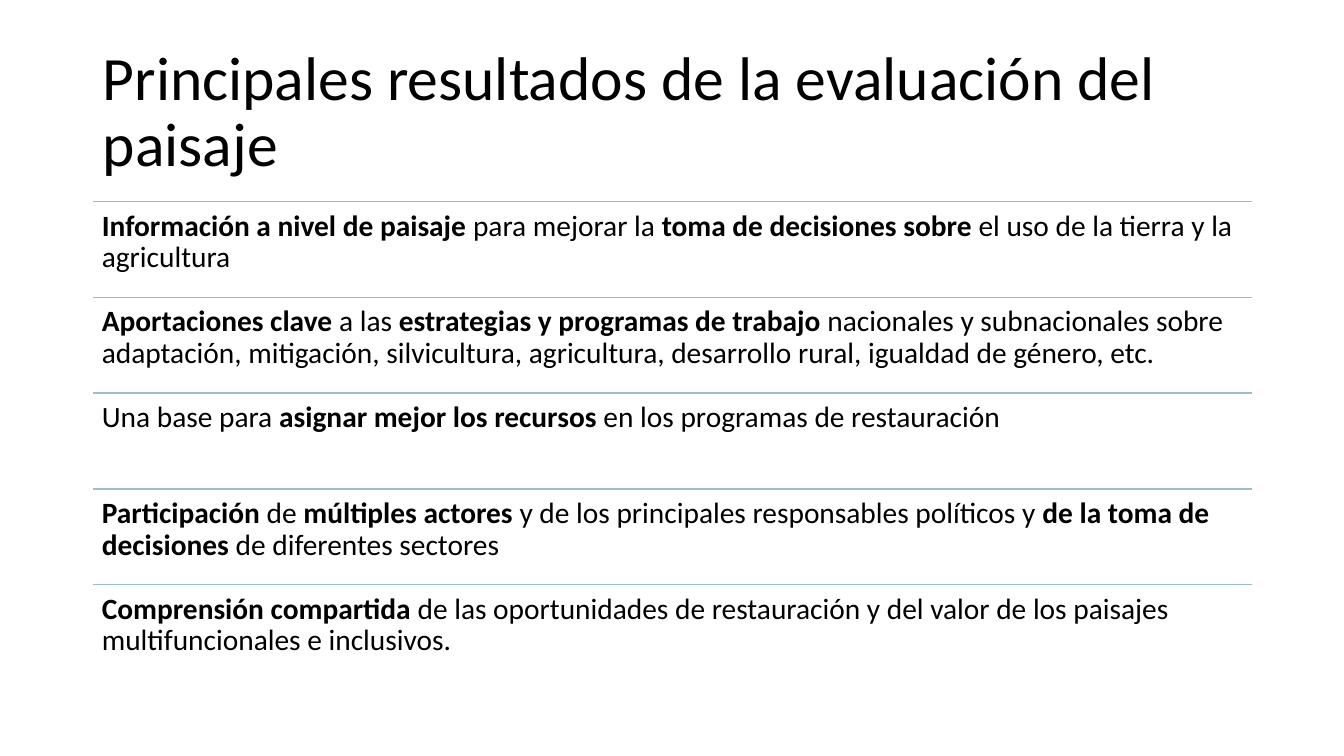
from lxml import etree
from pptx import Presentation, util as u
from pptx.dml.color import RGBColor
from pptx.enum import shapes, text
from pptx.oxml.ns import qn

BLACK = RGBColor(0x00, 0x00, 0x00)
SAGE = RGBColor(0x9D, 0xBF, 0xBE)

HEADING = "Principales resultados de la evaluación del paisaje"
RESULTS = [
    "*Información a nivel de paisaje *para mejorar la *toma de decisiones sobre *"
    "el uso de la tierra y la agricultura",
    "*Aportaciones clave *a las *estrategias y programas de trabajo *"
    "nacionales y subnacionales sobre adaptación, mitigación, silvicultura, "
    "agricultura, desarrollo rural, igualdad de género, etc.",
    "Una base para *asignar mejor los recursos *en los programas de restauración",
    "*Participación *de *múltiples actores *y de los principales responsables "
    "políticos y *de la toma de decisiones *de diferentes sectores",
    "*Comprensión compartida *de las oportunidades de restauración y del valor "
    "de los paisajes multifuncionales e inclusivos.",
]


class ResultsSlide:
    """Draws a heading and ruled rows of results on one slide."""

    font = "Calibri"
    left, width = u.Inches(0.92), u.Inches(11.5)
    first_row, row = u.Inches(2), u.Inches(0.95)
    inset = u.Inches(0.09)

    def __init__(self, deck):
        self.slide = deck.slides.add_slide(deck.slide_layouts[5])

    def row_top(self, index):
        return self.first_row + index * self.row

    def style(self, paragraph, size):
        paragraph.alignment = text.PP_ALIGN.LEFT
        paragraph.line_spacing = 0.9
        paragraph.font.name = self.font
        paragraph.font.size = u.Pt(size)
        paragraph.font.color.rgb = BLACK

    def heading(self, words):
        title = self.slide.shapes.title
        title.left, title.top = self.left, u.Inches(0.4)
        title.width, title.height = self.width, u.Inches(1.45)
        frame = title.text_frame
        frame.text = words
        frame.word_wrap = True
        frame.auto_size = text.MSO_AUTO_SIZE.NONE
        frame.vertical_anchor = text.MSO_ANCHOR.MIDDLE
        self.style(frame.paragraphs[0], 44)

    def rule(self, index):
        top = self.row_top(index)
        divider = self.slide.shapes.add_connector(
            shapes.MSO_CONNECTOR.STRAIGHT, self.left, top, self.left + self.width, top)
        divider.line.color.rgb = SAGE
        divider.line.width = u.Pt(1)
        etree.SubElement(divider.element.spPr, qn("a:effectLst"))

    def result(self, index, marked):
        entry = self.slide.shapes.add_textbox(
            self.left, self.row_top(index), self.width, self.row)
        frame = entry.text_frame
        frame.word_wrap = True
        frame.margin_left = frame.margin_right = self.inset
        frame.margin_top = frame.margin_bottom = self.inset
        sentence = frame.paragraphs[0]
        self.style(sentence, 21)
        for position, words in enumerate(marked.split("*")):
            if words:
                run = sentence.add_run()
                run.text = words
                run.font.bold = position % 2 == 1


def main():
    deck = Presentation()
    deck.slide_width, deck.slide_height = u.Inches(13.33), u.Inches(7.5)
    findings = ResultsSlide(deck)
    findings.heading(HEADING)
    for index, marked in enumerate(RESULTS):
        findings.rule(index)
        findings.result(index, marked)
    deck.save("out.pptx")


if __name__ == "__main__":
    main()
